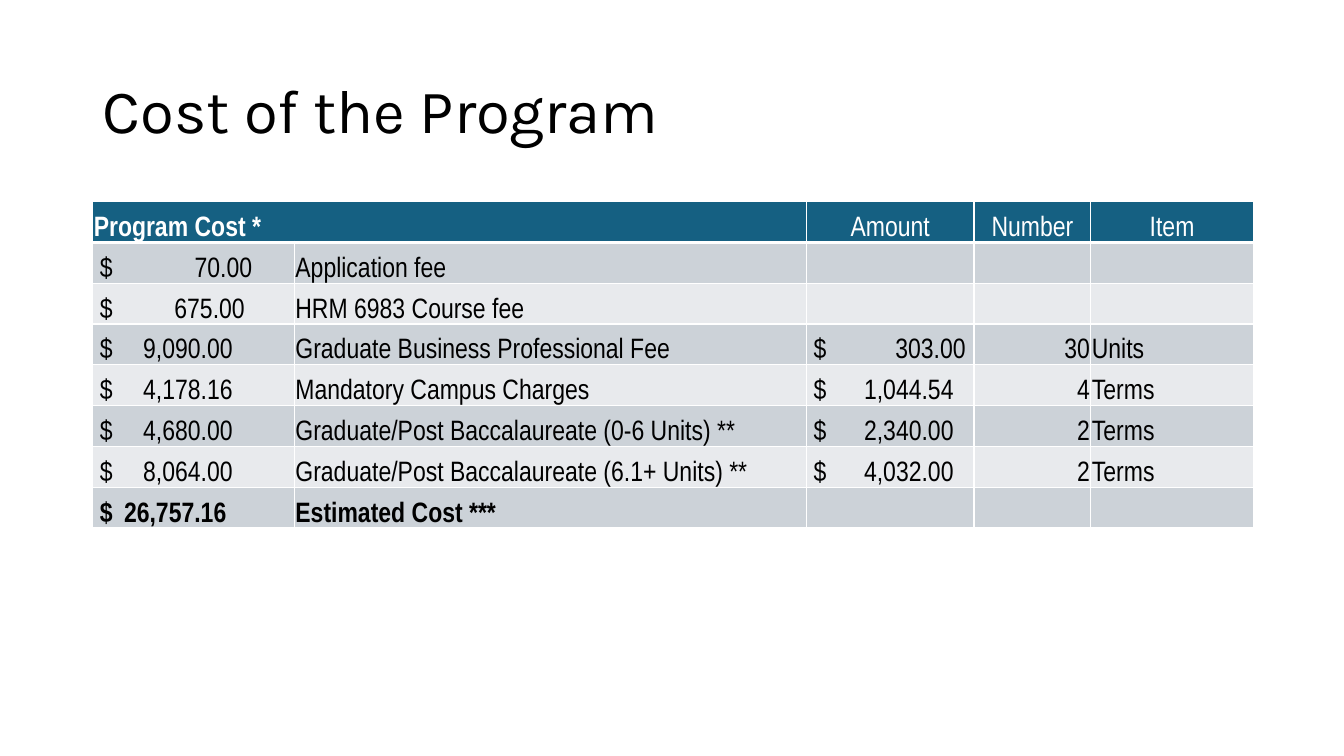
from lxml.etree import SubElement
from pptx import Presentation
from pptx.dml.color import RGBColor
from pptx.enum.text import MSO_ANCHOR, PP_ALIGN
from pptx.oxml.ns import qn
from pptx.util import Inches, Pt

COLORS = {
    "header": "156082",
    "odd": "CCD2D8",
    "even": "E8EAED",
    "border": "FFFFFF",
    "light": "FFFFFF",
    "dark": "000000",
}
COLUMN_WIDTHS = [2, 5.08, 1.66, 1.16, 1.61]
ROW_HEIGHT = 0.405
MONEY_COLUMNS = (0, 2)
NUMBER_COLUMN = 3
HEADER = ["Program Cost *", "", "Amount", "Number", "Item"]
COSTS = [
    ["70.00", "Application fee", "", "", ""],
    ["675.00", "HRM 6983 Course fee", "", "", ""],
    ["9,090.00", "Graduate Business Professional Fee", "303.00", "30", "Units"],
    ["4,178.16", "Mandatory Campus Charges", "1,044.54", "4", "Terms"],
    ["4,680.00", "Graduate/Post Baccalaureate (0-6 Units) **", "2,340.00", "2", "Terms"],
    ["8,064.00", "Graduate/Post Baccalaureate (6.1+ Units) **", "4,032.00", "2", "Terms"],
    ["26,757.16", "Estimated Cost ***", "", "", ""],
]
AMOUNT_TABS = {
    "70.00": 0.94,
    "675.00": 0.74,
    "26,757.16": 0.24,
    "303.00": 0.81,
    "1,044.54": 0.5,
    "2,340.00": 0.5,
    "4,032.00": 0.5,
}
DEFAULT_TAB = 0.43


def rgb(name):
    return RGBColor.from_string(COLORS[name])


def style_text(para, font, size, color, bold=False):
    for span in para.runs:
        span.font.name = font
        span.font.size = Pt(size)
        span.font.bold = bold
        span.font.color.rgb = rgb(color)


def add_title(page, text):
    box = page.shapes.add_textbox(Inches(0.92), Inches(0.4), Inches(11.5), Inches(1.45))
    frame = box.text_frame
    frame.word_wrap = True
    frame.vertical_anchor = MSO_ANCHOR.MIDDLE
    frame.text = text
    para = frame.paragraphs[0]
    para.line_spacing = 0.9
    style_text(para, "Karla", 44, "dark")


def set_borders(cell, top, bottom):
    properties = cell._tc.get_or_add_tcPr()
    widths = {"a:lnL": 1, "a:lnR": 1, "a:lnT": top, "a:lnB": bottom}
    for tag, width in widths.items():
        line = SubElement(properties, qn(tag), w=str(Pt(width)))
        fill = SubElement(line, qn("a:solidFill"))
        SubElement(fill, qn("a:srgbClr"), val=COLORS["border"])


def set_tab(para, position):
    tabs = SubElement(para._p.get_or_add_pPr(), qn("a:tabLst"))
    SubElement(tabs, qn("a:tab"), pos=str(Inches(position)), algn="l")


def fill_cell(cell, text, fill, color, bold, align, top, bottom):
    set_borders(cell, top, bottom)
    cell.fill.solid()
    cell.fill.fore_color.rgb = rgb(fill)
    cell.vertical_anchor = MSO_ANCHOR.BOTTOM
    cell.margin_left = cell.margin_right = cell.margin_top = Inches(0.01)
    cell.margin_bottom = 0
    para = cell.text_frame.paragraphs[0]
    para.text = text
    para.alignment = align
    style_text(para, "Arial Narrow", 20, color, bold)


def fill_header(table):
    for column, text in enumerate(HEADER):
        align = PP_ALIGN.LEFT if column < 2 else PP_ALIGN.CENTER
        fill_cell(table.cell(0, column), text, "header", "light", column == 0, align, 1, 3)
    table.cell(0, 0).merge(table.cell(0, 1))


def fill_costs(table):
    for row, values in enumerate(COSTS, 1):
        fill = "odd" if row % 2 else "even"
        top = 3 if row == 1 else 1
        for column, value in enumerate(values):
            cell = table.cell(row, column)
            money = column in MONEY_COLUMNS and value
            text = f"$\t{value}" if money else value
            align = PP_ALIGN.RIGHT if column == NUMBER_COLUMN else PP_ALIGN.LEFT
            fill_cell(cell, text, fill, "dark", row == len(COSTS), align, top, 1)
            if money:
                cell.margin_left = Inches(0.07)
                set_tab(cell.text_frame.paragraphs[0], AMOUNT_TABS.get(value, DEFAULT_TAB))


def add_cost_table(page):
    rows = len(COSTS) + 1
    frame = page.shapes.add_table(
        rows, len(COLUMN_WIDTHS), Inches(0.92), Inches(2),
        Inches(sum(COLUMN_WIDTHS)), Inches(ROW_HEIGHT * rows),
    )
    table = frame.table
    for column, width in zip(table.columns, COLUMN_WIDTHS):
        column.width = Inches(width)
    for row in table.rows:
        row.height = Inches(ROW_HEIGHT)
    fill_header(table)
    fill_costs(table)


def main():
    deck = Presentation()
    deck.slide_width = Inches(13.33)
    deck.slide_height = Inches(7.5)
    page = deck.slides.add_slide(deck.slide_layouts[6])
    add_title(page, "Cost of the Program")
    add_cost_table(page)
    deck.save("out.pptx")


if __name__ == "__main__":
    main()
